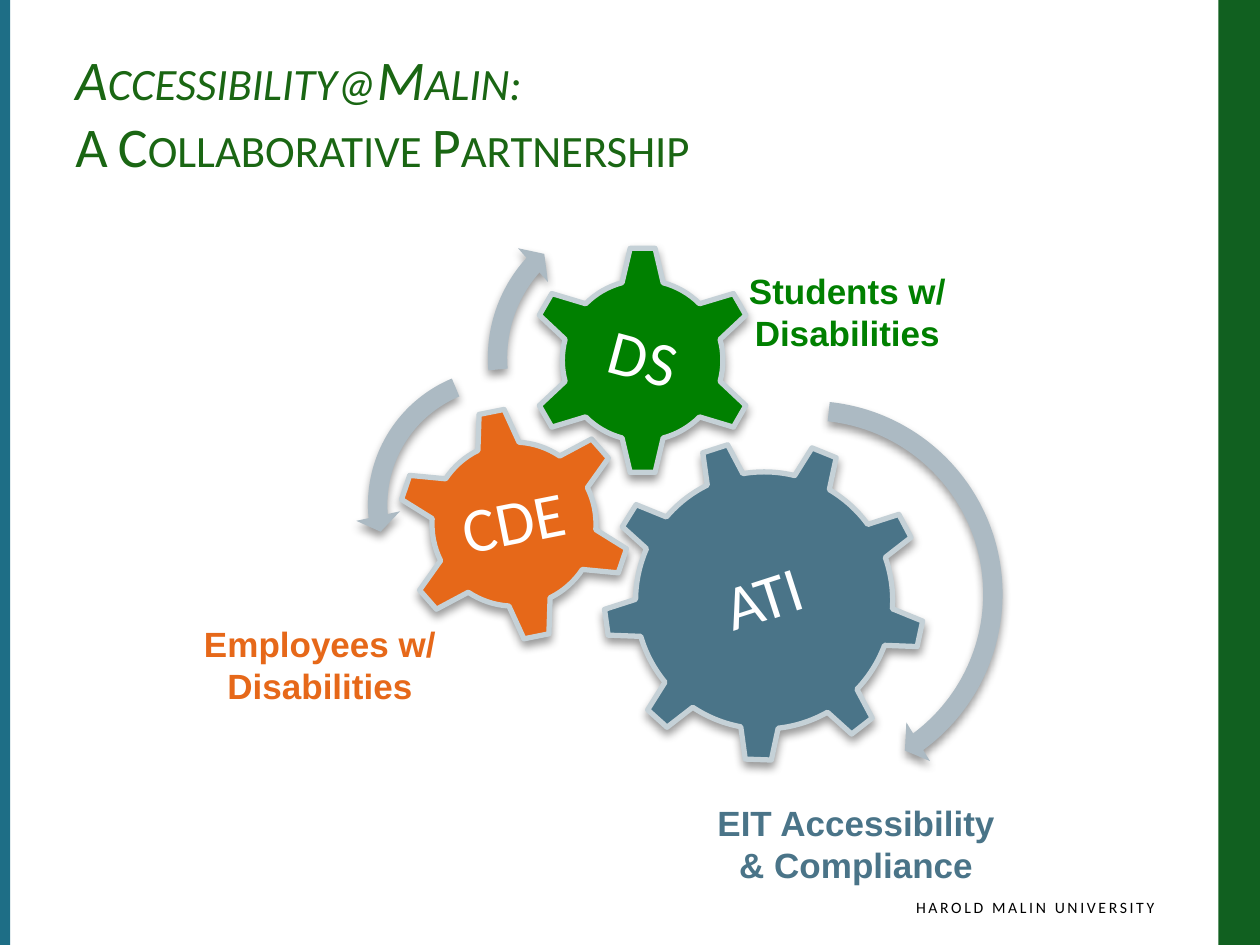
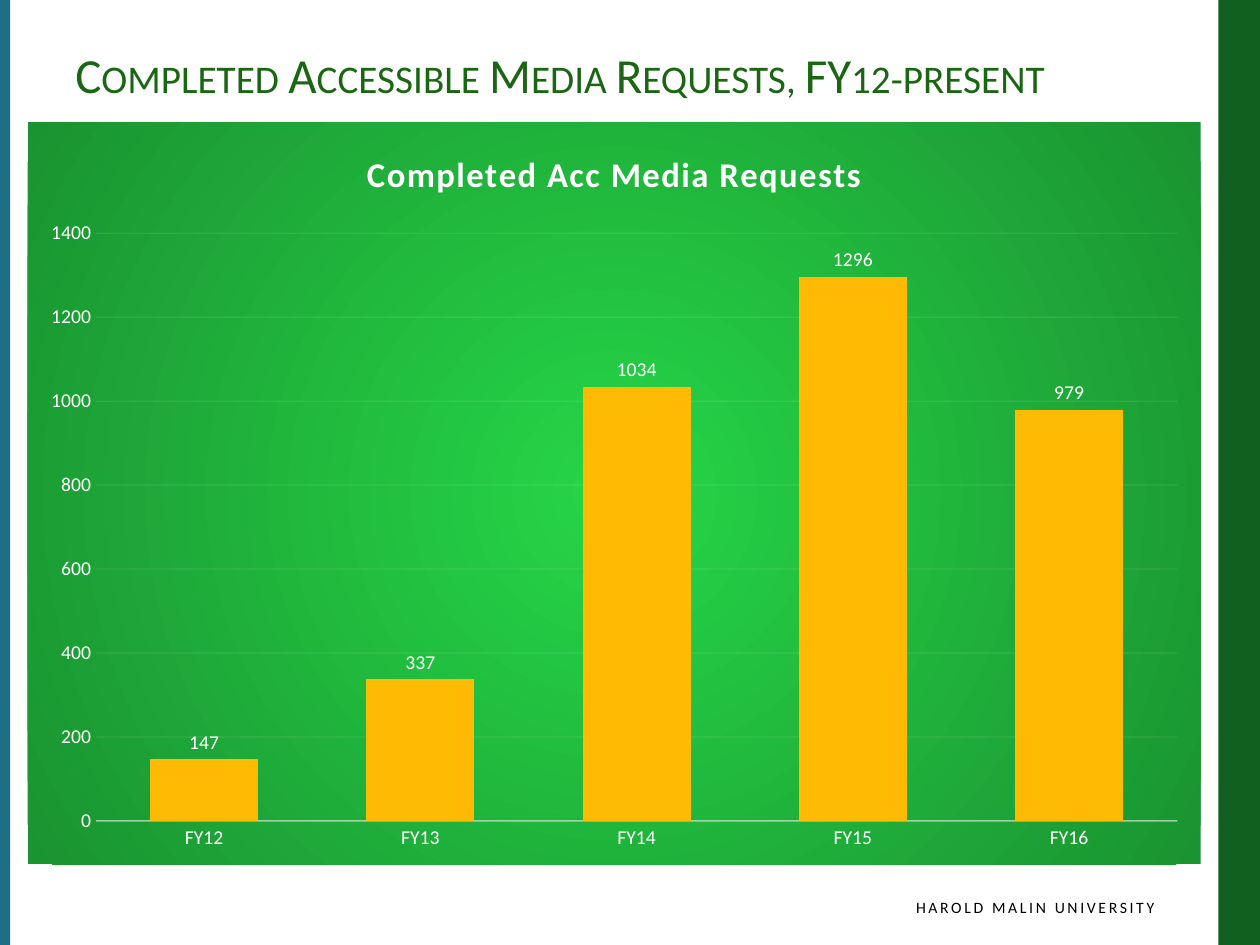
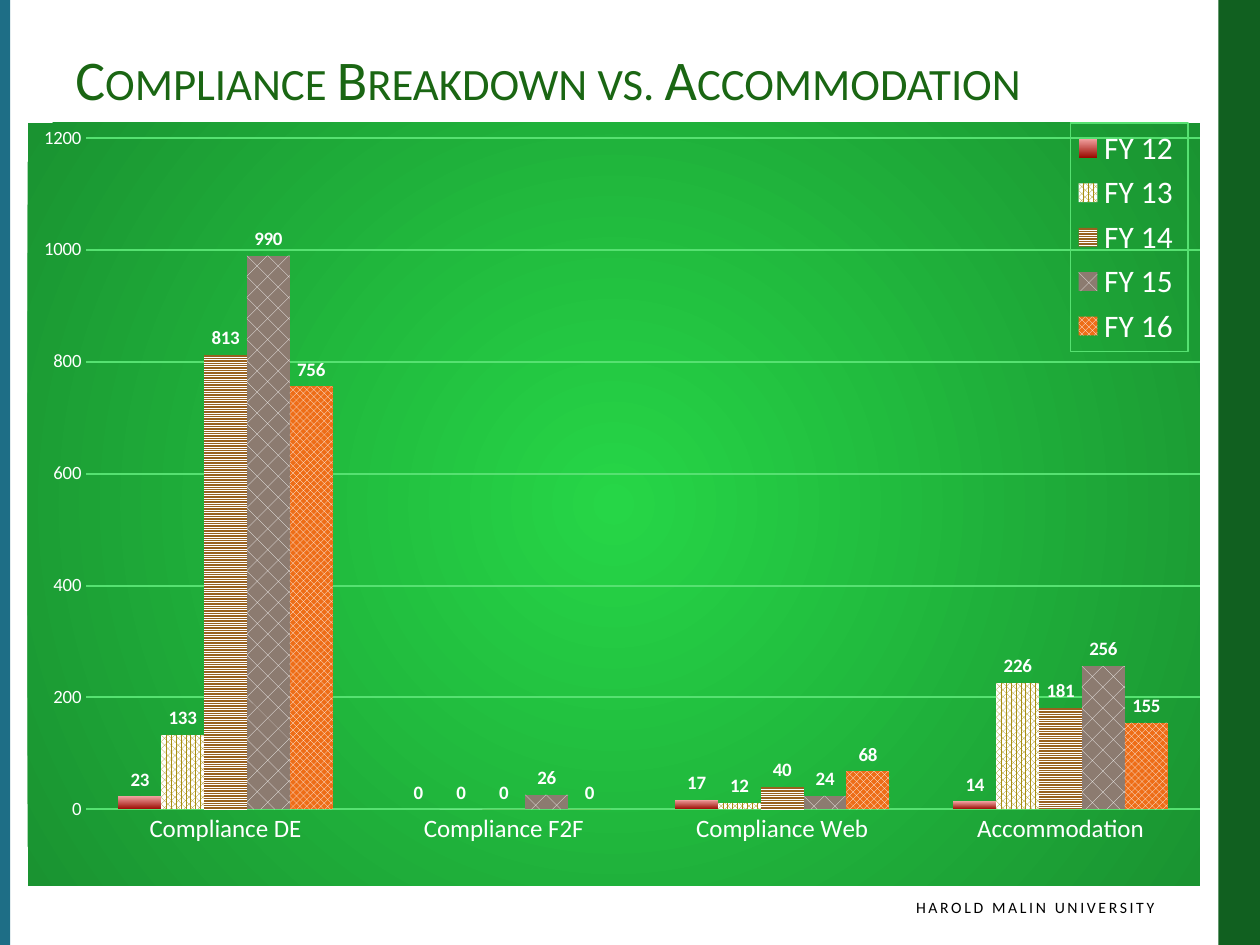
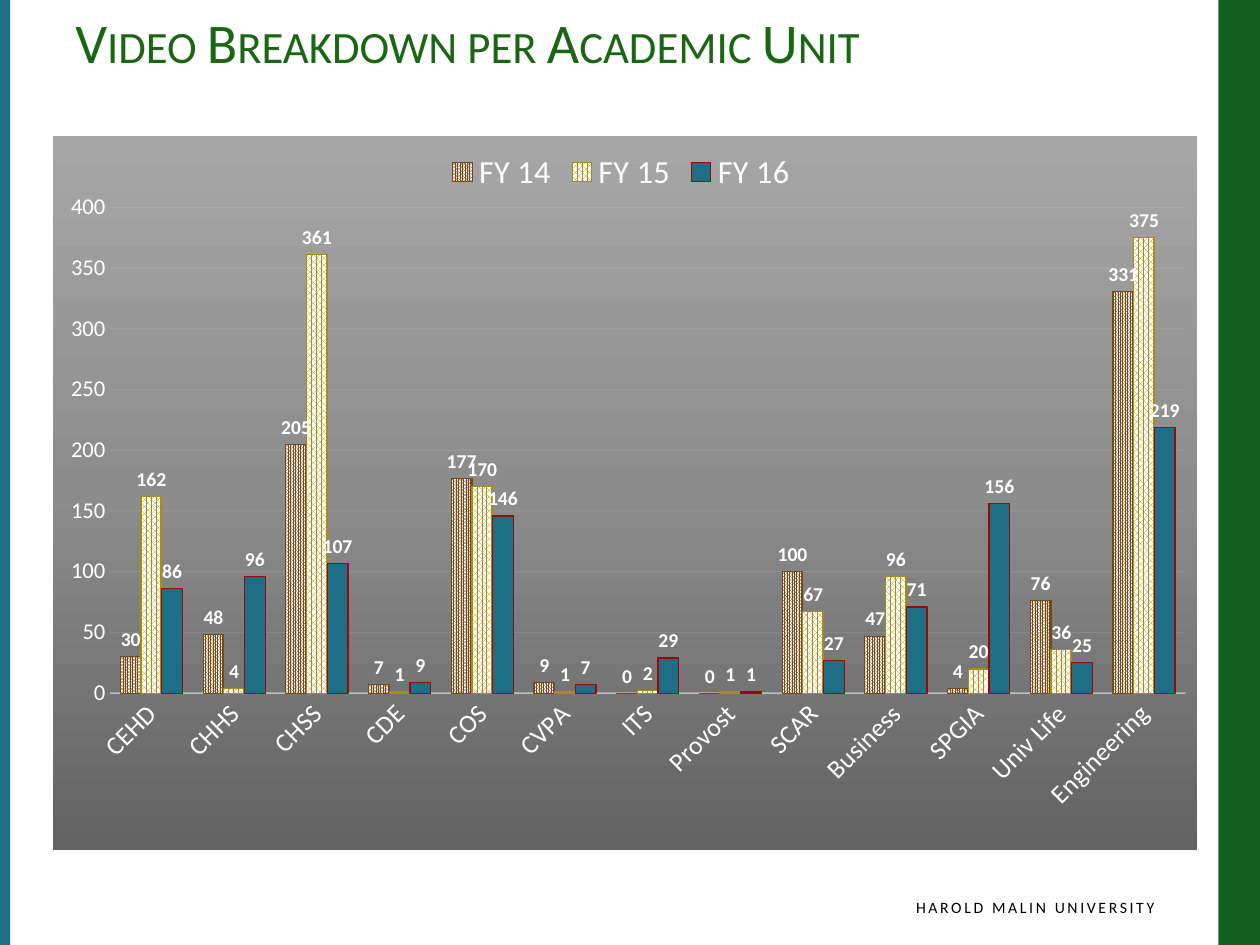
from lxml.etree import SubElement
from pptx import Presentation
from pptx.chart.data import CategoryChartData
from pptx.dml.color import RGBColor
from pptx.enum.chart import XL_CHART_TYPE, XL_LABEL_POSITION, XL_LEGEND_POSITION, XL_TICK_MARK
from pptx.enum.dml import MSO_PATTERN
from pptx.enum.shapes import MSO_SHAPE
from pptx.enum.text import MSO_ANCHOR, PP_ALIGN
from pptx.oxml import parse_xml
from pptx.oxml.ns import nsdecls, qn
from pptx.util import Emu, Pt

EMU_PER_PX = 9144
SLIDE_SIZE = (1000, 750)
BODY_FONT = "Calibri"
CAPTION_FONT = "Arial"
WHITE, DARK_GREEN, TEAL, TITLE_GREEN = "FFFFFF", "116020", "1E6E86", "1A6613"
STEEL, ORANGE, LEAF, PALE, ARROW_GRAY = "4A7488", "E66819", "008000", "C5D1D7", "ACBAC3"
SOFT_WHITE, GRID_GREEN = "F2F2F2", "56E171"

BANDS = [((967, 0, 33, 750), DARK_GREEN), ((0, 0, 8, 750), TEAL)]
FOOTER = ("HAROLD MALIN UNIVERSITY", (508, 708, 408, 33))

GEARS = [
    ("ATI", MSO_SHAPE.GEAR_9, (479, 349, 255, 255), 342.1, STEEL, (153, 135), 342.1),
    ("CDE", MSO_SHAPE.GEAR_6, (315, 323, 186, 186), 348.7, ORANGE, (92, 92), 348.7),
    ("DS", MSO_SHAPE.GEAR_6, (419, 195, 182, 182), 0, LEAF, (102, 102), 15),
]
ARROWS = [
    (MSO_SHAPE.CIRCULAR_ARROW, (479, 308, 327, 327), 11.7, 4.7, (4.98, 41.96, 264.31), 5.5),
    (MSO_SHAPE.LEFT_CIRCULAR_ARROW, (282, 282, 237, 237), 0, 6.5, (7.17, 174.82, 247.3), 7.5),
    (MSO_SHAPE.CIRCULAR_ARROW, (377, 156, 256, 256), 0, 6, (6.57, 221.9, 175.14), 7),
]
CAPTIONS = [
    ("Students w/ \nDisabilities", (583, 209, 179, 77), LEAF, False),
    ("Employees w/\nDisabilities", (126, 489, 256, 77), ORANGE, True),
    ("EIT Accessibility \n& Compliance", (558, 631, 243, 77), STEEL, False),
]

GREEN_GLOW = {"stops": [(0, "26D647"), (100, "1A9331")], "circle": True}
GRAY_FADE = {"stops": [(0, "626262"), (50, "8C8C8C"), (100, "A6A6A6")], "circle": False}
OLIVE_DOTS = (MSO_PATTERN.PERCENT_75, "A78E11", WHITE)

REQUESTS = {
    "box": (22, 97, 931, 589), "background": GREEN_GLOW,
    "title": "Completed Acc Media Requests",
    "categories": ["FY12", "FY13", "FY14", "FY15", "FY16"],
    "series": [("Completed Acc Media Requests", [147, 337, 1034, 1296, 979], "FFBA03", None)],
    "scale": (1400, 200), "gap": 100, "overlap": -24,
    "sizes": {"category": 11.2, "value": 11.2, "label": 11.2}, "bold_labels": False,
    "baseline": (SOFT_WHITE, 0.93, 54), "grid": (SOFT_WHITE, 0.7, 10),
}
COMPLIANCE = {
    "box": (22, 97, 931, 606), "background": GREEN_GLOW,
    "categories": ["Compliance DE", "Compliance F2F", "Compliance Web", "Accommodation"],
    "series": [
        ("FY 12", [23, 0, 17, 14], ("9A0A00", "F1A09F"), None),
        ("FY 13", [133, 0, 12, 226], OLIVE_DOTS, None),
        ("FY 14", [813, 0, 40, 181], (MSO_PATTERN.LIGHT_HORIZONTAL, WHITE, "99611F"), None),
        ("FY 15", [990, 26, 24, 256], (MSO_PATTERN.DIAGONAL_BRICK, WHITE, "8C7B70"), None),
        ("FY 16 ", [756, 0, 68, 155], (MSO_PATTERN.SOLID_DIAMOND, WHITE, "EE6D17"), None),
    ],
    "scale": (1200, 200), "gap": 150, "overlap": 0,
    "sizes": {"category": 14.3, "value": 10.7, "label": 10.8, "legend": 17.9},
    "bold_labels": True, "baseline": None, "grid": (GRID_GREEN, 1.12, 100),
    "plot": (0.05, 0.02, 0.95, 0.88),
    "legend": XL_LEGEND_POSITION.CORNER, "legend_box": (0.89, 0, 0.1, 0.3),
}
VIDEOS = {
    "box": (42, 108, 908, 567), "background": GRAY_FADE,
    "categories": ["CEHD", "CHHS", "CHSS", "CDE", "COS", "CVPA", "ITS", "Provost", "SCAR",
                   "Business", "SPGIA", "Univ Life", "Engineering"],
    "series": [
        ("FY 14", [30, 48, 205, 7, 177, 9, 0, 0, 100, 47, 4, 76, 331],
         (MSO_PATTERN.PERCENT_90, "734917", WHITE), ("734917", 0.69)),
        ("FY 15", [162, 4, 361, 1, 170, 1, 2, 1, 67, 96, 20, 36, 375],
         OLIVE_DOTS, ("A78E11", 0.75)),
        ("FY 16 ", [86, 96, 107, 9, 146, 7, 29, 1, 27, 71, 156, 25, 219],
         TEAL, ("990B01", 0.75)),
    ],
    "scale": (400, 50), "gap": 100, "overlap": 0,
    "sizes": {"category": 14.8, "value": 12.9, "label": 11.2, "legend": 18.4},
    "bold_labels": True, "baseline": (SOFT_WHITE, 0.92, 54), "grid": (SOFT_WHITE, 0.69, 10),
    "plot": (0.05, 0.1, 0.94, 0.68), "tilt": -45,
    "legend": XL_LEGEND_POSITION.TOP,
}
SLIDES = [
    ("Accessibility@Malin:\vA Collaborative Partnership", 30, 32, None),
    ("Completed Accessible Media Requests, FY12-present", 30, 28, REQUESTS),
    ("Compliance Breakdown vs. Accommodation", 30, 32, COMPLIANCE),
    ("Video Breakdown per Academic Unit", 1, 32, VIDEOS),
]


def px(lengths):
    return [Emu(round(length * EMU_PER_PX)) for length in lengths]


def rgb(color):
    return RGBColor.from_string(color)


def style_font(font, size, color, name=BODY_FONT, bold=False):
    font.size, font.name, font.bold = Pt(size), name, bold
    font.color.rgb = rgb(color)


def add_text(slide, text, box, size, color, name=BODY_FONT, bold=False, align=PP_ALIGN.LEFT,
             inset=(10, 5, 10, 5), wrap=True, **run_attributes):
    holder = slide.shapes.add_textbox(*px(box))
    frame = holder.text_frame
    frame.word_wrap = wrap
    frame.margin_left, frame.margin_top, frame.margin_right, frame.margin_bottom = px(inset)
    frame.text = text
    for paragraph in frame.paragraphs:
        paragraph.alignment = align
        for run in paragraph.runs:
            style_font(run.font, size, color, name, bold)
            for key, value in run_attributes.items():
                run.font._element.set(key, value)
    return holder


def add_solid(slide, preset, box, color, turn=0):
    solid = slide.shapes.add_shape(preset, *px(box))
    solid.shadow.inherit = False
    solid.fill.solid()
    solid.fill.fore_color.rgb = rgb(color)
    solid.line.fill.background()
    solid.rotation = turn
    return solid


def cast_shadow(solid):
    effects = solid._element.spPr.find(qn("a:effectLst"))
    shadow = SubElement(effects, qn("a:outerShdw"), blurRad=str(Pt(5.2)), dist=str(Pt(3)),
                        dir="5400000", rotWithShape="0")
    black = SubElement(shadow, qn("a:srgbClr"), val="000000")
    SubElement(black, qn("a:alpha"), val="40000")


def draw_partnership(slide):
    for label, preset, box, turn, color, (width, height), label_turn in GEARS:
        gear = add_solid(slide, preset, box, color, turn)
        gear.line.color.rgb = rgb(PALE)
        gear.line.width = Pt(3)
        cast_shadow(gear)
        left, top, span, depth = box
        label_box = (left + (span - width) / 2, top + (depth - height) / 2, width, height)
        name = add_text(slide, label, label_box, 36, WHITE, align=PP_ALIGN.CENTER,
                        inset=(5, 5, 5, 5), wrap=False)
        name.text_frame.vertical_anchor = MSO_ANCHOR.MIDDLE
        name.text_frame.paragraphs[0].line_spacing = 0.9
        name.rotation = label_turn
    for preset, box, turn, thickness, angles, head in ARROWS:
        arrow = add_solid(slide, preset, box, ARROW_GRAY, turn)
        settings = [thickness / 100, *(angle * 0.6 for angle in angles), head / 100]
        for index, setting in enumerate(settings):
            arrow.adjustments[index] = setting
        cast_shadow(arrow)
    for text, box, color, wrap in CAPTIONS:
        add_text(slide, text, box, 20, color, CAPTION_FONT, True, PP_ALIGN.CENTER, wrap=wrap)


def style_line(line, color, width, opacity=100):
    line.color.rgb = rgb(color)
    line.width = Pt(width)
    if opacity < 100:
        tint = line._get_or_add_ln().find(".//" + qn("a:srgbClr"))
        SubElement(tint, qn("a:alpha"), val=str(opacity * 1000))


def background_xml(stops, circle):
    marks = "".join(f'<a:gs pos="{at * 1000}"><a:srgbClr val="{color}"/></a:gs>'
                    for at, color in stops)
    direction = ('<a:path path="circle"><a:fillToRect l="50000" t="50000" r="50000" b="50000"/>'
                 '</a:path>' if circle else '<a:lin ang="16200000" scaled="0"/>')
    return parse_xml(f'<c:spPr {nsdecls("c", "a")}><a:gradFill><a:gsLst>{marks}</a:gsLst>'
                     f'{direction}</a:gradFill><a:ln><a:noFill/></a:ln></c:spPr>')


def layout_xml(place, inner):
    target = '<c:layoutTarget val="inner"/>' if inner else ""
    modes = '<c:xMode val="edge"/><c:yMode val="edge"/>'
    sides = "".join(f'<c:{side} val="{value}"/>' for side, value in zip("xywh", place))
    return parse_xml(f'<c:layout {nsdecls("c")}><c:manualLayout>{target}{modes}{sides}'
                     '</c:manualLayout></c:layout>')


def place_part(part, position, place, inner=False):
    for automatic in part.findall(qn("c:layout")):
        part.remove(automatic)
    part.insert(position, layout_xml(place, inner))


def fill_series(fill, paint):
    if isinstance(paint, str):
        fill.solid()
        fill.fore_color.rgb = rgb(paint)
    elif len(paint) == 2:
        fill.gradient()
        fill.gradient_angle = 90
        for stop, color in zip(fill.gradient_stops, paint):
            stop.color.rgb = rgb(color)
    else:
        fill.patterned()
        fill.pattern = paint[0]
        fill.fore_color.rgb, fill.back_color.rgb = rgb(paint[1]), rgb(paint[2])


def style_axes(chart, content):
    sizes = content["sizes"]
    categories, values = chart.category_axis, chart.value_axis
    for axis, size in ((categories, sizes["category"]), (values, sizes["value"])):
        axis.major_tick_mark = axis.minor_tick_mark = XL_TICK_MARK.NONE
        style_font(axis.tick_labels.font, size, WHITE)
        axis.format.line.fill.background()
    if content["baseline"]:
        style_line(categories.format.line, *content["baseline"])
    if "tilt" in content:
        body = categories._element.find(qn("c:txPr")).find(qn("a:bodyPr"))
        body.set("rot", str(content["tilt"] * 60000))
    values.minimum_scale = 0
    values.maximum_scale, values.major_unit = content["scale"]
    values.has_major_gridlines = True
    style_line(values.major_gridlines.format.line, *content["grid"])


def add_legend(chart, content):
    chart.has_legend = True
    legend = chart.legend
    legend.position = content["legend"]
    legend.include_in_layout = "legend_box" in content
    style_font(legend.font, content["sizes"]["legend"], WHITE)
    if "legend_box" in content:
        place_part(legend._element, 1, content["legend_box"])
        border = parse_xml(f'<c:spPr {nsdecls("c", "a")}><a:noFill/><a:ln w="9525"><a:solidFill>'
                           f'<a:srgbClr val="{GRID_GREEN}"/></a:solidFill></a:ln></c:spPr>')
        legend._element.find(qn("c:overlay")).addnext(border)


def draw_chart(slide, content):
    data = CategoryChartData()
    data.categories = content["categories"]
    for name, values, _, _ in content["series"]:
        data.add_series(name, values)
    chart = slide.shapes.add_chart(XL_CHART_TYPE.COLUMN_CLUSTERED, *px(content["box"]), data).chart
    style_font(chart.font, 10, DARK_GREEN)
    body = chart._chartSpace.find(qn("c:chart"))
    body.addnext(background_xml(**content["background"]))
    chart.has_title = "title" in content
    if chart.has_title:
        heading = chart.chart_title.text_frame
        heading.text = content["title"]
        run = heading.paragraphs[0].runs[0]
        style_font(run.font, 19.8, WHITE, bold=True)
        run.font._element.set("spc", "100")
    plot = chart.plots[0]
    plot.vary_by_categories = False
    plot.gap_width, plot.overlap = content["gap"], content["overlap"]
    for series, (_, _, paint, outline) in zip(plot.series, content["series"]):
        fill_series(series.format.fill, paint)
        if outline:
            style_line(series.format.line, *outline)
        labels = series.data_labels
        labels.show_value = True
        labels.position = XL_LABEL_POSITION.OUTSIDE_END
        style_font(labels.font, content["sizes"]["label"], WHITE, bold=content["bold_labels"])
    style_axes(chart, content)
    chart.has_legend = False
    if "legend" in content:
        add_legend(chart, content)
    if "plot" in content:
        place_part(body.find(qn("c:plotArea")), 0, content["plot"], True)


def main():
    deck = Presentation()
    deck.slide_width, deck.slide_height = px(SLIDE_SIZE)
    for title, top, size, chart_content in SLIDES:
        slide = deck.slides.add_slide(deck.slide_layouts[6])
        for box, color in BANDS:
            add_solid(slide, MSO_SHAPE.RECTANGLE, box, color)
        add_text(slide, *FOOTER, 9, "000000", align=PP_ALIGN.RIGHT, inset=(10, 5, 0, 5), spc="150")
        heading = add_text(slide, title, (50, top, 810, 125), size, TITLE_GREEN, cap="small")
        if chart_content:
            draw_chart(slide, chart_content)
        else:
            heading.text_frame.paragraphs[0].runs[0].font.italic = True
            draw_partnership(slide)
    deck.save("out.pptx")


if __name__ == "__main__":
    main()
